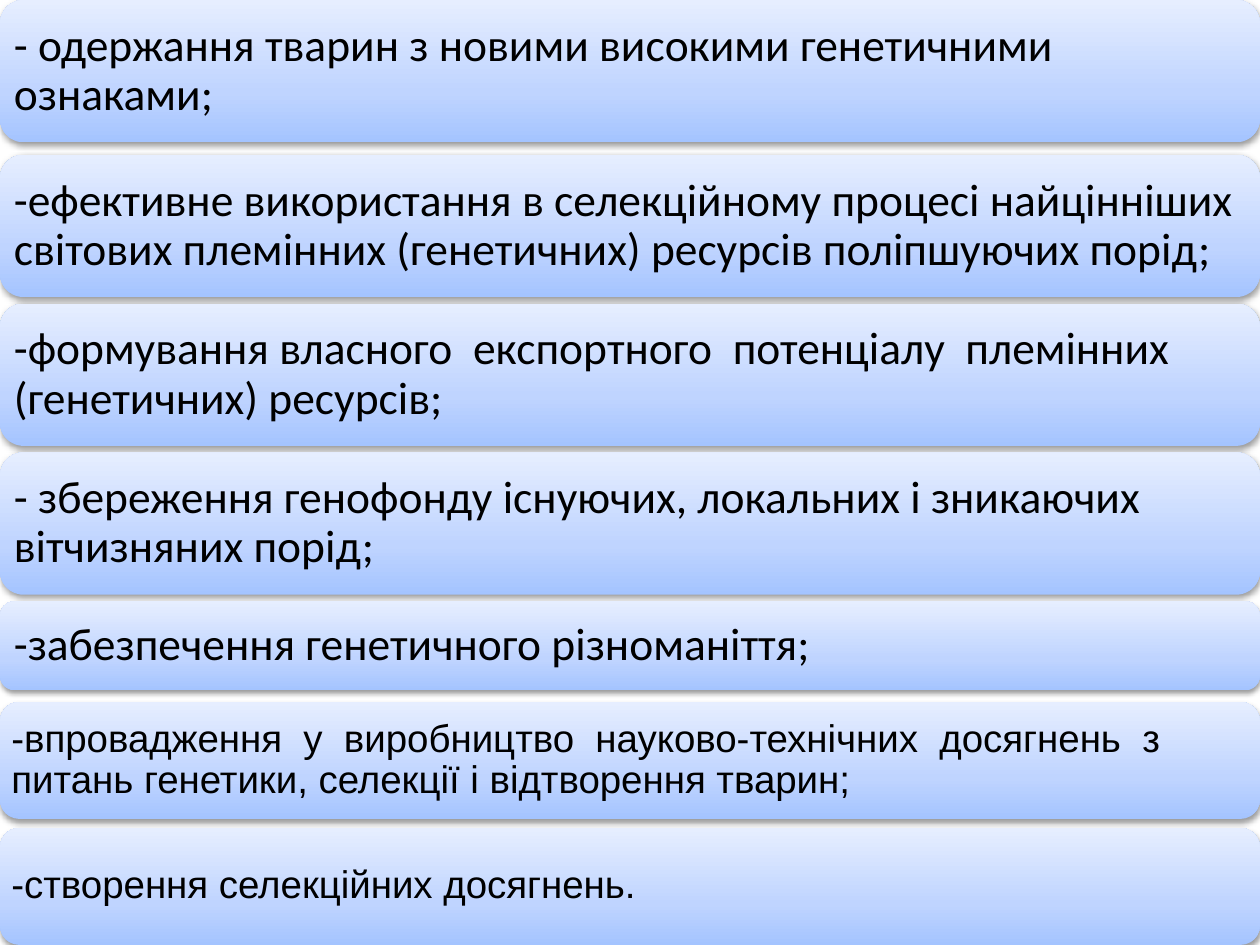
"""Build a slide that lists the goals of animal breeding as stacked bars."""
from lxml import etree
from copy import deepcopy
from pptx import Presentation
from pptx.dml.color import RGBColor
from pptx.enum.shapes import MSO_SHAPE
from pptx.enum.text import MSO_ANCHOR, PP_ALIGN
from pptx.oxml.ns import qn
from pptx.util import Cm, Pt

ROUND = MSO_SHAPE.ROUNDED_RECTANGLE
MIDDLE = MSO_ANCHOR.MIDDLE
LEFT = PP_ALIGN.LEFT

WIDTH, HEIGHT = 25.4, 19.05
CORNER = 0.16667
ARC = 0.29

THEME = {
    "ink": "000000",
    "stops": [(0, "A4C4FF"), (0.35, "BFD4FF"), (1, "E6EEFF")],
    "main": {"font": "Calibri", "size": 26, "pad": 0.28},
    "minor": {"font": "Arial", "size": 22, "pad": 0.23},
}

GOALS = [
    ("main", 0, 2.87, "- одержання тварин з новими високими генетичними ознаками;"),
    ("main", 0.25, 2.87, "-ефективне використання в селекційному процесі найцінніших "
     "світових племінних (генетичних) ресурсів поліпшуючих порід;"),
    ("main", 0.13, 2.87, "-формування власного  експортного  потенціалу  племінних  "
     "(генетичних) ресурсів;"),
    ("main", 0.13, 2.87, "- збереження генофонду існуючих, локальних і зникаючих "
     "вітчизняних порід;"),
    ("main", 0.13, 1.8, "-забезпечення генетичного різноманіття;"),
    ("minor", 0.23, 2.36, "-впровадження  у  виробництво  науково-технічних  досягнень  з  "
     "питань генетики, селекції і відтворення тварин;"),
    ("minor", 0.18, 2.36, "-створення селекційних досягнень."),
]


def shade(bar):
    bar.fill.gradient()
    bar.fill.gradient_angle = 90
    stops = bar.element.spPr.find(".//" + qn("a:gsLst"))
    stops.append(deepcopy(stops[-1]))
    for stop, (place, color) in zip(bar.fill.gradient_stops, THEME["stops"]):
        stop.position = place
        stop.color.rgb = RGBColor.from_string(color)


def cast(bar):
    bar.shadow.inherit = False
    effects = bar.element.spPr.find(qn("a:effectLst"))
    drop = etree.SubElement(effects, qn("a:outerShdw"), blurRad="40000",
                            dist="20000", dir="5400000", rotWithShape="0")
    color = etree.SubElement(drop, qn("a:srgbClr"), val=THEME["ink"])
    etree.SubElement(color, qn("a:alpha"), val="38000")


def write(bar, text, style, tall):
    frame = bar.text_frame
    frame.word_wrap = True
    frame.vertical_anchor = MIDDLE
    pad = Cm(style["pad"] - ARC * CORNER * tall)
    frame.margin_left = frame.margin_right = pad
    frame.margin_top = frame.margin_bottom = pad
    frame.text = text
    line = frame.paragraphs[0]
    line.alignment = LEFT
    line.line_spacing = 0.9
    font = line.runs[0].font
    font.name = style["font"]
    font.size = Pt(style["size"])
    font.color.rgb = RGBColor.from_string(THEME["ink"])


def main():
    deck = Presentation()
    deck.slide_width, deck.slide_height = Cm(WIDTH), Cm(HEIGHT)
    slide = deck.slides.add_slide(deck.slide_layouts[6])
    top = 0
    for kind, gap, tall, text in GOALS:
        top += gap
        bar = slide.shapes.add_shape(ROUND, 0, Cm(top), Cm(WIDTH), Cm(tall))
        bar.line.fill.background()
        shade(bar)
        cast(bar)
        write(bar, text, THEME[kind], tall)
        top += tall
    deck.save("out.pptx")


if __name__ == "__main__":
    main()
